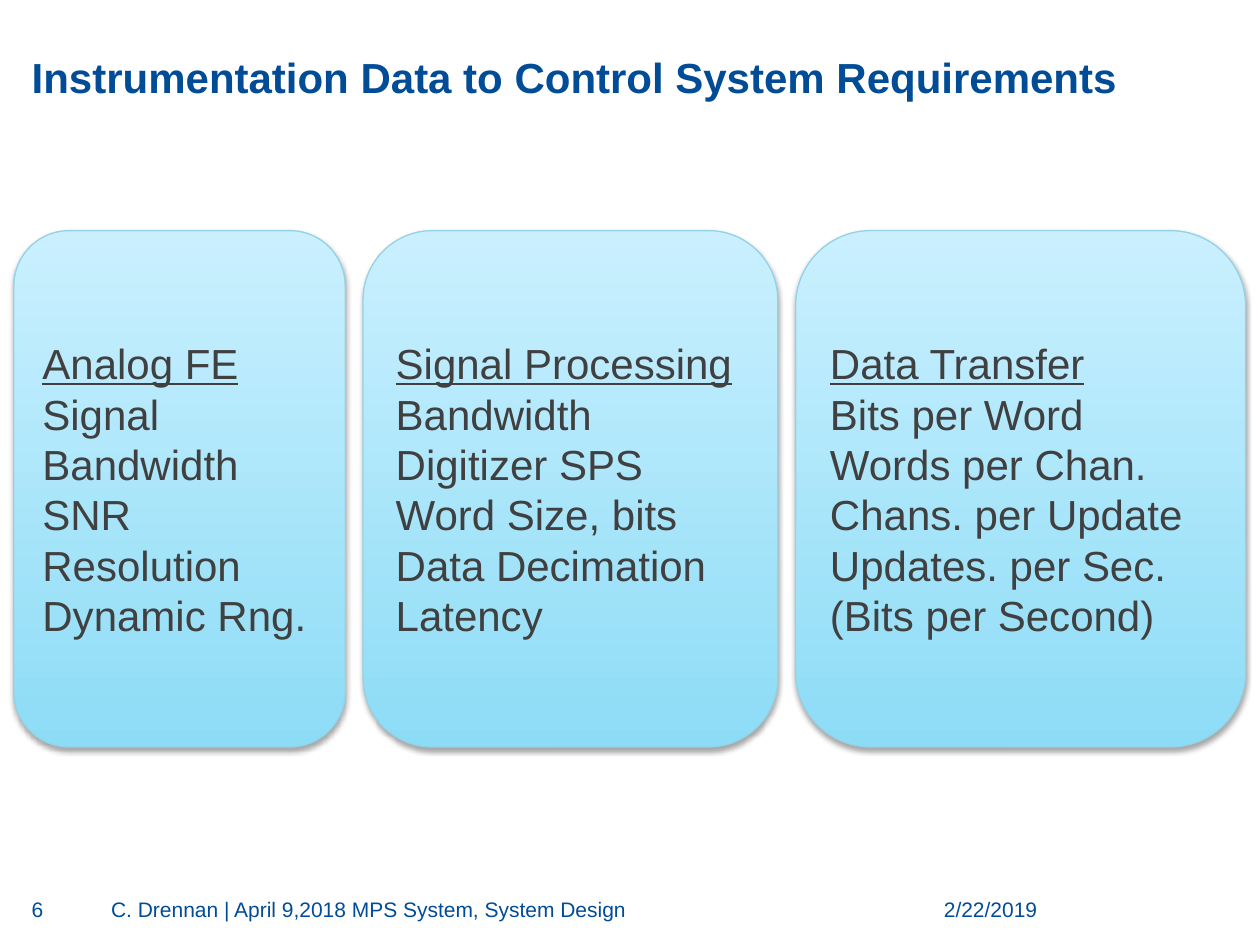
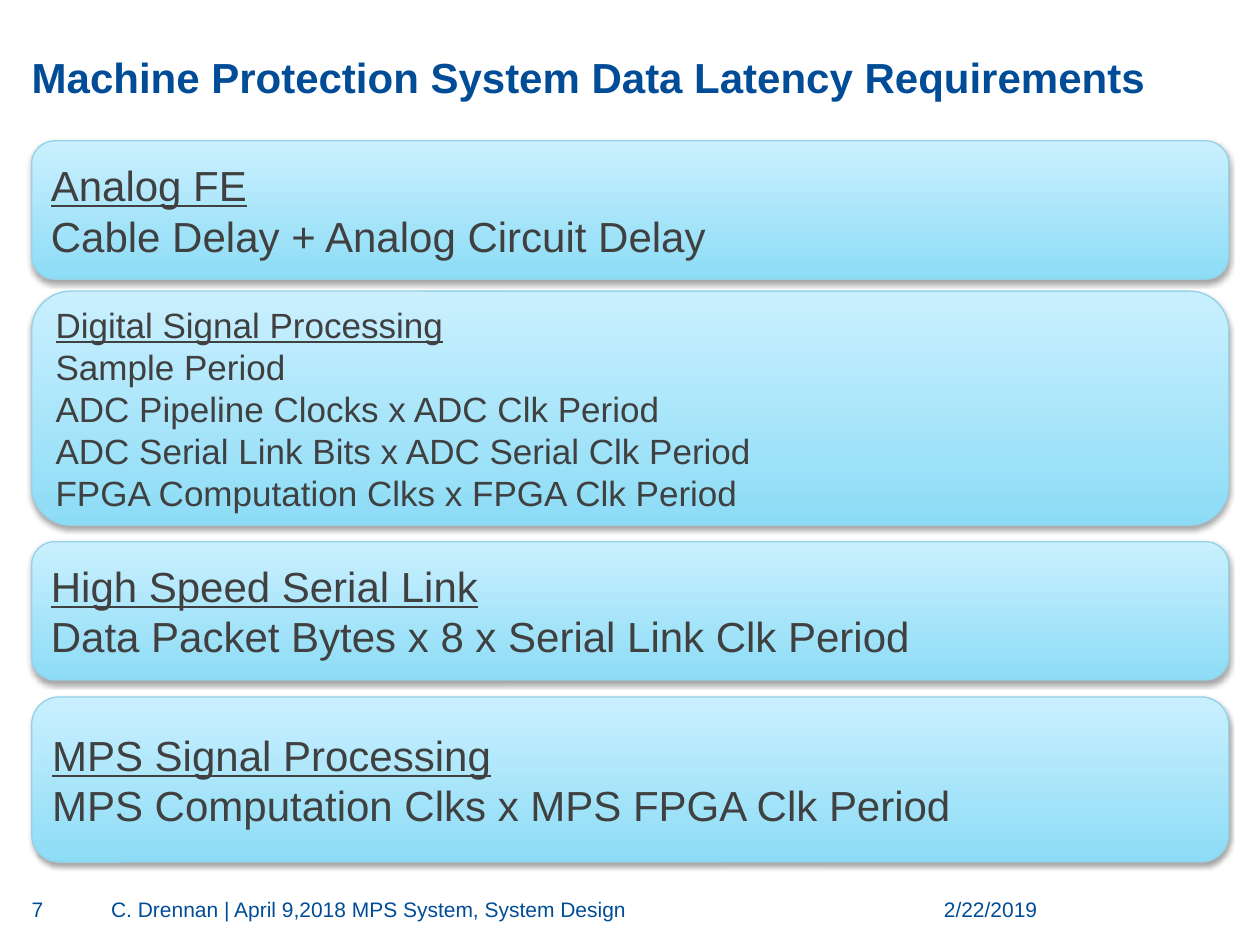
from lxml import etree
from pptx import Presentation
from pptx.dml.color import RGBColor
from pptx.enum.shapes import MSO_SHAPE
from pptx.enum.text import MSO_ANCHOR, PP_ALIGN
from pptx.oxml.ns import qn
from pptx.util import Cm, Pt

ROUNDED = MSO_SHAPE.ROUNDED_RECTANGLE
TOP, MIDDLE, BOTTOM = MSO_ANCHOR.TOP, MSO_ANCHOR.MIDDLE, MSO_ANCHOR.BOTTOM
LEFT, RIGHT = PP_ALIGN.LEFT, PP_ALIGN.RIGHT

FONT = "Arial"
NAVY = "004C97"
GRAY = "404040"
PANEL_BOTTOM = "8DDCF6"
PANEL_TOP = "CAF0FF"
PANEL_LINE = "94D2E7"
MARGIN = 0.64
CONTENT_WIDTH = 24.13


def color(value):
    return RGBColor.from_string(value)


def write(box, text, size=24, fill=NAVY, bold=False, heading=False,
          align=LEFT, anchor=TOP, inset=None):
    frame = box.text_frame
    frame.word_wrap = True
    frame.vertical_anchor = anchor
    if inset is not None:
        frame.margin_left = frame.margin_right = Cm(inset)
        frame.margin_top = frame.margin_bottom = Cm(inset)
    for index, line in enumerate(text.split("\n")):
        paragraph = frame.paragraphs[0] if index == 0 else frame.add_paragraph()
        paragraph.alignment = align
        span = paragraph.add_run()
        span.text = line
        span.font.name = FONT
        span.font.size = Pt(size)
        span.font.bold = bold
        span.font.underline = heading and index == 0
        span.font.color.rgb = color(fill)


columns = []
column_left = 0.28
for width, text in [
    (6.68, "Analog FE\nSignal Bandwidth\nSNR\nResolution\nDynamic Rng."),
    (8.36, "Signal Processing\nBandwidth\nDigitizer SPS Word Size, bits\n"
           "Data Decimation\nLatency"),
    (9.07, "Data Transfer\nBits per Word\nWords per Chan.\nChans. per Update\n"
           "Updates. per Sec.\n(Bits per Second)"),
]:
    columns.append((column_left, 4.65, width, 10.41, 24, text))
    column_left += width + 0.36

rows = [
    (MARGIN, top, CONTENT_WIDTH, height, size, text)
    for top, height, size, text in [
        (2.84, 2.79, 24, "Analog FE\nCable Delay + Analog Circuit Delay"),
        (5.87, 4.72, 20, "Digital Signal Processing\nSample Period\n"
                         "ADC Pipeline Clocks x ADC Clk Period\n"
                         "ADC Serial Link Bits x ADC Serial Clk Period\n"
                         "FPGA Computation Clks x FPGA Clk Period"),
        (10.92, 2.79, 24, "High Speed Serial Link\n"
                          "Data Packet Bytes x 8 x Serial Link Clk Period"),
        (14.05, 3.33, 24, "MPS Signal Processing\n"
                          "MPS Computation Clks x MPS FPGA Clk Period"),
    ]
]

slides = [
    ("6", "Instrumentation Data to Control System Requirements", columns),
    ("7", "Machine Protection System Data Latency Requirements", rows),
]

deck = Presentation()
deck.slide_width = Cm(25.4)
deck.slide_height = Cm(19.05)

for number, title, panels in slides:
    page = deck.slides.add_slide(deck.slide_layouts[6])

    title_box = page.shapes.add_textbox(Cm(MARGIN), Cm(0.28), Cm(CONTENT_WIDTH), Cm(1.78))
    write(title_box, title, bold=True, anchor=BOTTOM, inset=0)

    for left, width, text, align in [
        (17.91, 3.0, "2/22/2019", RIGHT),
        (2.24, 14.94, "C. Drennan | April 9,2018 MPS System, System Design", LEFT),
        (MARGIN, 1.24, number, LEFT),
    ]:
        footer = page.shapes.add_textbox(Cm(left), Cm(18.08), Cm(width), Cm(0.66))
        write(footer, text, size=12, align=align, inset=0)

    for left, top, width, height, size, text in panels:
        panel = page.shapes.add_shape(ROUNDED, Cm(left), Cm(top), Cm(width), Cm(height))
        panel.fill.gradient()
        panel.fill.gradient_angle = 90
        for stop, shade in zip(panel.fill.gradient_stops, (PANEL_BOTTOM, PANEL_TOP)):
            stop.color.rgb = color(shade)
            stop.position = 0 if shade == PANEL_BOTTOM else 1
        panel.line.color.rgb = color(PANEL_LINE)
        panel.line.width = Pt(0.75)

        panel.shadow.inherit = False
        effects = panel.element.spPr.find(qn("a:effectLst"))
        shadow = etree.SubElement(effects, qn("a:outerShdw"), blurRad=str(Pt(3.1)),
                                  dist=str(Pt(1.8)), dir="5400000", rotWithShape="0")
        shadow_color = etree.SubElement(shadow, qn("a:srgbClr"), val="000000")
        etree.SubElement(shadow_color, qn("a:alpha"), val="35000")

        write(panel, text, size=size, fill=GRAY, heading=True, anchor=MIDDLE)

deck.save("out.pptx")
